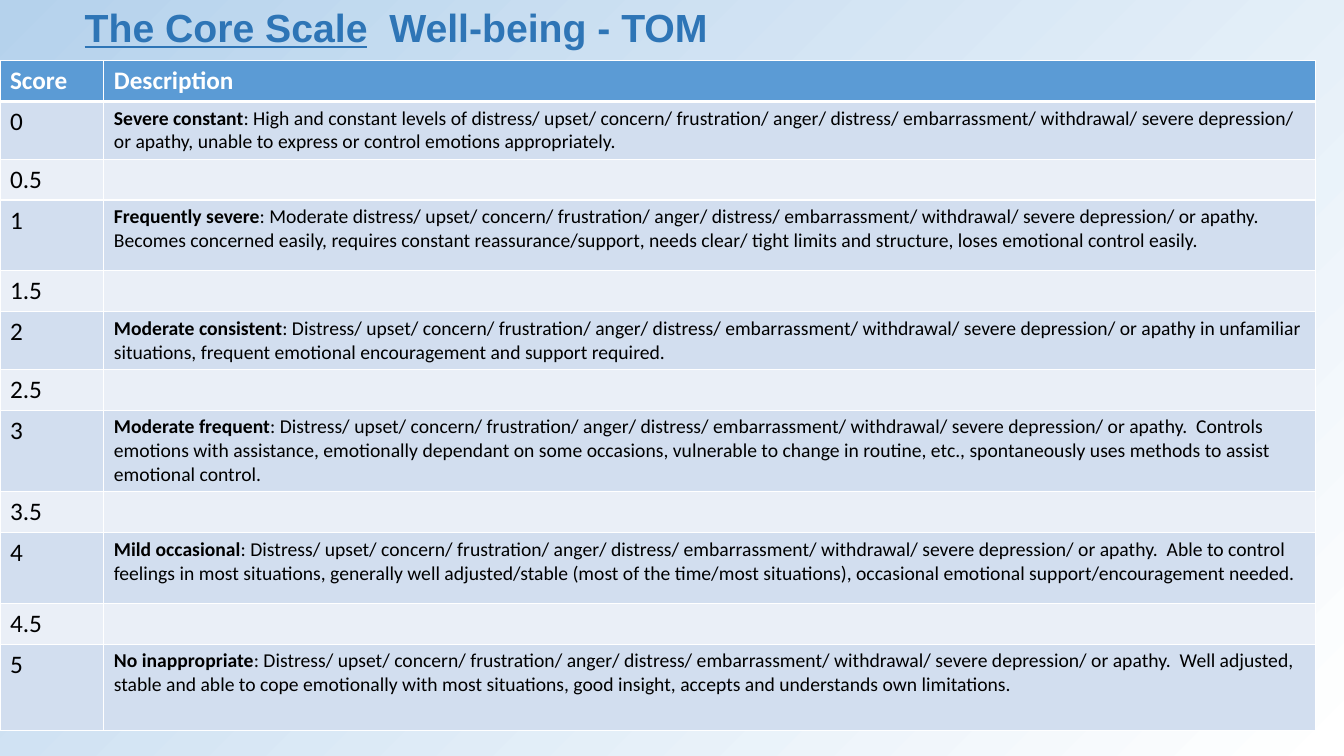
from lxml import etree
from pptx import Presentation
from pptx.dml.color import RGBColor
from pptx.enum.text import MSO_ANCHOR, PP_ALIGN
from pptx.oxml.ns import qn
from pptx.util import Inches, Pt

MIDDLE = MSO_ANCHOR.MIDDLE
LEFT = PP_ALIGN.LEFT

WHITE = RGBColor(0xFF, 0xFF, 0xFF)
BLACK = RGBColor(0x00, 0x00, 0x00)
SKY = RGBColor(0xB5, 0xD2, 0xEC)
TITLE_BLUE = RGBColor(0x2E, 0x75, 0xB6)
HEADER_BLUE = RGBColor(0x5B, 0x9B, 0xD5)
WHOLE_SCORE_FILL = RGBColor(0xD2, 0xDE, 0xEF)
HALF_SCORE_FILL = RGBColor(0xEA, 0xEF, 0xF7)

COLUMN_WIDTHS = (1.03, 12.02)
SINGLE_ROW_HEIGHT = 0.4
EMOTIONS = "distress/ upset/ concern/ frustration/ anger/ distress/ embarrassment/ withdrawal/ severe depression/ or apathy"
EMOTIONS_FIRST = EMOTIONS.capitalize()

LEVELS = [
    ("Severe constant", 0.56,
     f": High and constant levels of {EMOTIONS}, unable to express or control emotions appropriately."),
    ("Frequently severe", 0.7,
     f": Moderate {EMOTIONS}. Becomes concerned easily, requires constant reassurance/support, "
     "needs clear/ tight limits and structure, loses emotional control easily."),
    ("Moderate consistent", 0.56,
     f": {EMOTIONS_FIRST} in unfamiliar situations, frequent emotional encouragement and support required."),
    ("Moderate frequent", 0.79,
     f": {EMOTIONS_FIRST}.  Controls emotions with assistance, emotionally dependant on some occasions, "
     "vulnerable to change in routine, etc., spontaneously uses methods to assist emotional control."),
    ("Mild occasional", 0.7,
     f": {EMOTIONS_FIRST}.  Able to control feelings in most situations, generally well adjusted/stable "
     "(most of the time/most situations), occasional emotional support/encouragement needed."),
    ("No inappropriate", 0.86,
     f": {EMOTIONS_FIRST}.  Well adjusted, stable and able to cope emotionally with most situations, "
     "good insight, accepts and understands own limitations."),
]


def paint_background(slide):
    fill = slide.background.fill
    fill.gradient()
    fill.gradient_angle = 135
    for stop, color, position in zip(fill.gradient_stops, (WHITE, SKY), (0, 1)):
        stop.color.rgb = color
        stop.position = position


def add_run(paragraph, text, size, color, bold=False, font="Calibri"):
    run = paragraph.add_run()
    run.text = text
    run.font.name = font
    run.font.size = Pt(size)
    run.font.bold = bold
    run.font.color.rgb = color
    return run


def write_title(slide):
    title = slide.shapes.title
    title.left, title.top = Inches(0.74), Inches(-0.43)
    title.width, title.height = Inches(11.5), Inches(1.45)
    title.text_frame.vertical_anchor = MIDDLE
    heading = title.text_frame.paragraphs[0]
    heading.alignment = LEFT
    heading.line_spacing = 0.9
    for text, underlined in (("The Core Scale", True), ("  Well-being - TOM", False)):
        run = add_run(heading, text, 28, TITLE_BLUE, True, "Arial")
        run.font.underline = underlined


def style_cell(cell, color, top=1, bottom=1):
    properties = cell._tc.get_or_add_tcPr()
    for side, width in (("L", 1), ("R", 1), ("T", top), ("B", bottom)):
        border = etree.SubElement(properties, qn(f"a:ln{side}"), w=str(Pt(width)))
        solid = etree.SubElement(border, qn("a:solidFill"))
        etree.SubElement(solid, qn("a:srgbClr"), val=str(WHITE))
    cell.fill.solid()
    cell.fill.fore_color.rgb = color


def fill_header(table):
    for column, label in enumerate(("Score", "Description")):
        cell = table.cell(0, column)
        style_cell(cell, HEADER_BLUE, bottom=3)
        add_run(cell.text_frame.paragraphs[0], label, 18, WHITE, True)


def fill_score_row(table, step):
    row = step + 1
    level, is_half = divmod(step, 2)
    score_cell, description_cell = table.cell(row, 0), table.cell(row, 1)
    for cell in (score_cell, description_cell):
        style_cell(cell, HALF_SCORE_FILL if is_half else WHOLE_SCORE_FILL,
                   top=3 if step == 0 else 1)
    add_run(score_cell.text_frame.paragraphs[0], f"{step / 2:g}", 18, BLACK)
    if not is_half:
        name, height, detail = LEVELS[level]
        table.rows[row].height = Inches(height)
        description = description_cell.text_frame.paragraphs[0]
        add_run(description, name, 14, BLACK, True)
        add_run(description, detail, 14, BLACK)


def add_scale_table(slide):
    score_count = 2 * len(LEVELS) - 1
    table = slide.shapes.add_table(
        score_count + 1, len(COLUMN_WIDTHS),
        Inches(0), Inches(0.6), Inches(sum(COLUMN_WIDTHS)), Inches(6.6)).table
    for column, width in zip(table.columns, COLUMN_WIDTHS):
        column.width = Inches(width)
    for row in table.rows:
        row.height = Inches(SINGLE_ROW_HEIGHT)
    fill_header(table)
    for step in range(score_count):
        fill_score_row(table, step)


def main():
    presentation = Presentation()
    presentation.slide_width = Inches(13.33)
    presentation.slide_height = Inches(7.5)
    slide = presentation.slides.add_slide(presentation.slide_layouts[5])
    paint_background(slide)
    write_title(slide)
    add_scale_table(slide)
    presentation.save("out.pptx")


if __name__ == "__main__":
    main()
